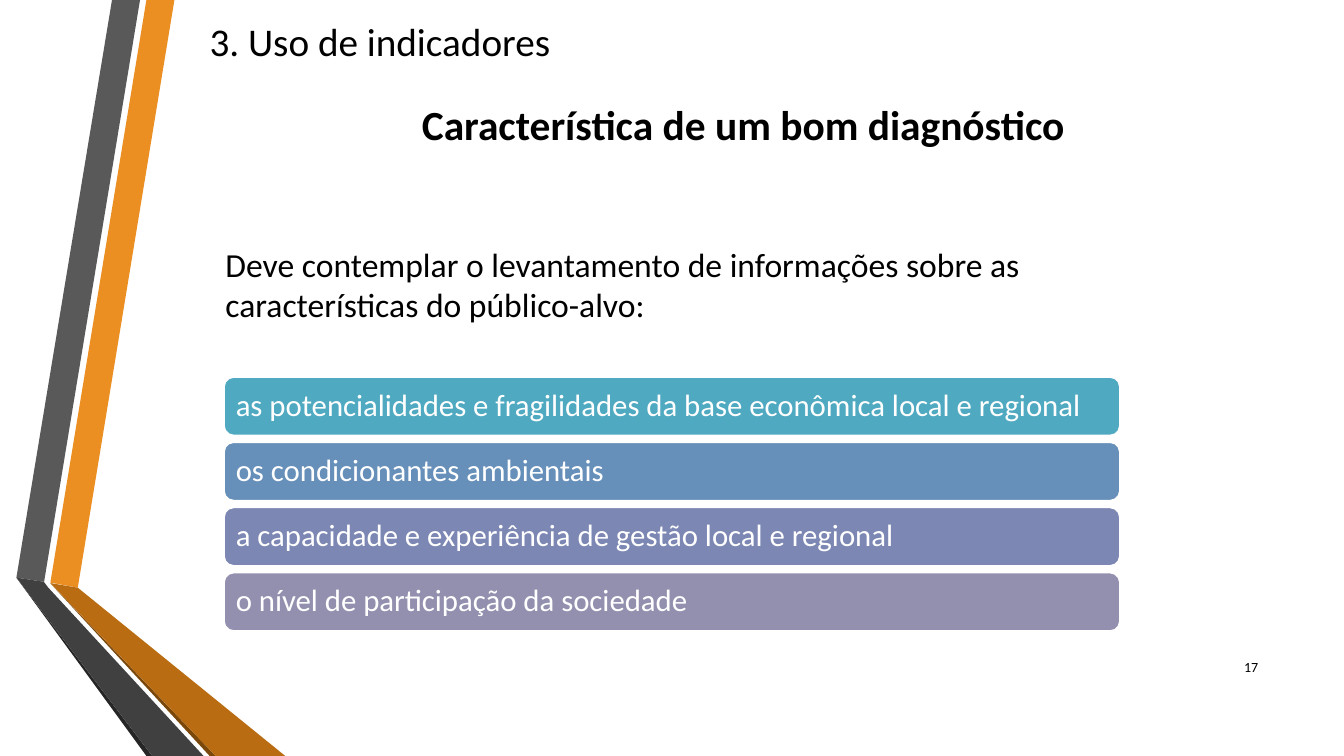
from pptx import Presentation
from pptx.dml.color import RGBColor
from pptx.enum.shapes import MSO_SHAPE as Form
from pptx.enum.text import MSO_ANCHOR as Anchor, PP_ALIGN as Align
from pptx.util import Pt

BLACK, WHITE = "000000", "FFFFFF"

# Side ribbons, back to front: colour and corners in points
BANDS = [
    ("EB8F22", [(36, 416.2), (55.6, 419.8), (124.6, 0), (104.6, 0)]),
    ("595959", [(100, 0), (80, 0), (11.7, 412.6), (31.5, 415.6)]),
    ("262626", [(11.7, 412.6), (104.6, 540), (108.7, 540)]),
    ("7B480B", [(36, 416.7), (149.8, 540), (154.1, 540)]),
    ("B96C11", [(36, 416.5), (154.1, 540), (203.8, 540), (55.6, 419.8)]),
    ("404040", [(145.4, 540), (34.5, 419.8), (31.3, 415.6), (11.7, 412.6),
                (108.7, 540)]),
]

# Bars: colour and wording
BARS = [
    ("4FA9C1", "as potencialidades e fragilidades da base econômica local e regional"),
    ("668FB9", "os condicionantes ambientais"),
    ("7C87B3", "a capacidade e experiência de gestão local e regional"),
    ("9390AF", "o nível de participação da sociedade"),
]


def tint(code):
    return RGBColor.from_string(code)


def paint(shape, code):
    shape.shadow.inherit = False
    shape.fill.solid()
    shape.fill.fore_color.rgb = tint(code)


def write(shape, text, size, code=BLACK, align=Align.LEFT, bold=False,
          anchor=Anchor.MIDDLE):
    frame = shape.text_frame
    frame.word_wrap = True
    frame.vertical_anchor = anchor
    para = frame.paragraphs[0]
    para.text = text
    para.alignment = align
    font = para.font
    font.name, font.size, font.bold = "Calibri", Pt(size), bold
    font.color.rgb = tint(code)
    return para


def label(slide, box, text, size, **style):
    write(slide.shapes.add_textbox(*map(Pt, box)), text, size, **style)


def band(slide, code, spots):
    first, *rest = [(Pt(x), Pt(y)) for x, y in spots]
    pen = slide.shapes.build_freeform(*first)
    pen.add_line_segments(rest, close=True)
    shape = pen.convert_to_shape()
    paint(shape, code)
    shape.line.fill.background()


def bar(slide, top, code, text):
    shape = slide.shapes.add_shape(
        Form.ROUNDED_RECTANGLE, Pt(160), Pt(top), Pt(640), Pt(41.8))
    paint(shape, code)
    shape.line.color.rgb = tint(WHITE)
    shape.line.width = Pt(1.25)
    frame = shape.text_frame
    frame.margin_left = frame.margin_right = Pt(6.4)
    write(shape, text, 22, WHITE).line_spacing = 0.9


def main():
    deck = Presentation()
    deck.slide_width, deck.slide_height = Pt(960), Pt(540)
    slide = deck.slides.add_slide(deck.slide_layouts[6])

    for code, spots in BANDS:
        band(slide, code, spots)

    # Headings and lead-in
    label(slide, (142.6, -5, 498, 67.7), "3. Uso de indicadores", 28)
    label(slide, (291.6, 54.7, 479.5, 67.7),
          "Característica de um bom diagnóstico", 29.6,
          align=Align.CENTER, bold=True)
    label(slide, (154, 170.6, 720, 65.5),
          "Deve contemplar o levantamento de informações sobre as "
          "características do público-alvo:", 24, anchor=Anchor.TOP)

    for step, (code, text) in enumerate(BARS):
        bar(slide, 269.3 + 46.55 * step, code, text)

    # Page number
    label(slide, (862.6, 462.2, 43.2, 28.8), "17", 10, align=Align.RIGHT)

    deck.save("out.pptx")


if __name__ == "__main__":
    main()
